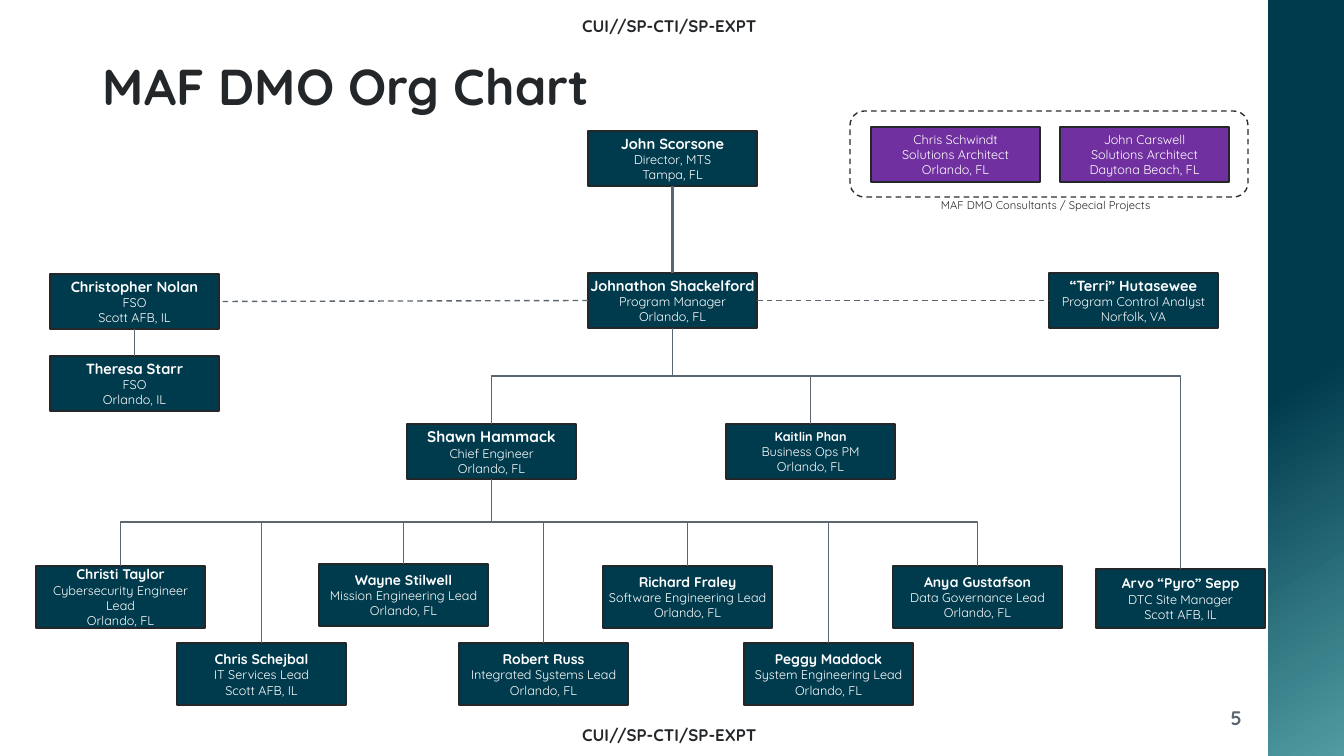
from pptx import Presentation
from pptx import util as u
from pptx.dml.color import RGBColor
from pptx.enum import dml, shapes, text
from pptx.oxml.ns import qn
from lxml import etree

# Content
COLORS = {"ink": "24272A", "teal": "003B4D", "sea": "509CA2", "purple": "7030A0",
          "grey": "5B6670", "outline": "282D31", "white": "FFFFFF"}
FONT = "Quicksand"
MARKING = "CUI//SP-CTI/SP-EXPT"
TITLE = "MAF DMO Org Chart"

# key: (left, top, height, size of the name, lines)
STAFF = {
    "director": (588, 131, 55, 10.5, ["John Scorsone", "Director, MTS", "Tampa, FL"]),
    "manager": (588, 273, 55, 10.5, ["Johnathon Shackelford", "Program Manager", "Orlando, FL"]),
    "security": (50, 274, 55, 10.5, ["Christopher Nolan", "FSO", "Scott AFB, IL"]),
    "deputy": (50, 356, 55, 10.5, ["Theresa Starr", "FSO", "Orlando, IL"]),
    "control": (1049, 273, 55, 10.5,
                ["“Terri” Hutasewee", "Program Control Analyst", "Norfolk, VA"]),
    "engineer": (407, 424, 55, 11, ["Shawn Hammack", "Chief Engineer", "Orlando, FL"]),
    "business": (726, 424, 55, 9, ["Kaitlin Phan", "Business Ops PM", "Orlando, FL"]),
    "site": (1096, 569, 59, 10, ["Arvo “Pyro” Sepp", "DTC Site Manager", "Scott AFB, IL"]),
    "cyber": (36, 566, 62, 10,
              ["Christi Taylor", "Cybersecurity Engineer", "Lead", "Orlando, FL"]),
    "it": (177, 643, 62, 10, ["Chris Schejbal", "IT Services Lead", "Scott AFB, IL"]),
    "mission": (319, 564, 62, 10,
                ["Wayne Stilwell", "Mission Engineering Lead", "Orlando, FL"]),
    "integrated": (459, 643, 62, 10,
                   ["Robert Russ", "Integrated Systems Lead", "Orlando, FL"]),
    "software": (603, 566, 62, 10,
                 ["Richard Fraley", "Software Engineering Lead", "Orlando, FL"]),
    "data": (893, 566, 62, 10, ["Anya Gustafson", "Data Governance Lead", "Orlando, FL"]),
    "system": (744, 643, 62, 10,
               ["Peggy Maddock", "System Engineering Lead", "Orlando, FL"]),
}
CONSULTANTS = [
    (1060, ["John Carswell", "Solutions Architect", "Daytona Beach, FL"]),
    (871, ["Chris Schwindt", "Solutions Architect", "Orlando, FL"]),
]
# (from, side, to, side, line width, dashed); sides: 0 top, 1 left, 2 bottom, 3 right
STRAIGHT = [
    ("director", 2, "manager", 0, 1.5, False),
    ("manager", 1, "security", 3, 1, True),
    ("security", 2, "deputy", 0, 1, False),
    ("manager", 3, "control", 1, 1, True),
]
# boss: (height of the shared bar, reports)
BRANCHES = {
    "manager": (376, ["engineer", "business", "site"]),
    "engineer": (522, ["cyber", "it", "mission", "integrated", "software", "data", "system"]),
}
BOX_WIDTH = 169

# Scale and helpers
PX = 12192000 / 1344


def px(*lengths):
    return [u.Emu(round(length * PX)) for length in lengths]


def color(name):
    return RGBColor.from_string(COLORS[name])


def style(para, size, tint, bold=False, align=text.PP_ALIGN.LEFT):
    para.alignment = align
    for span in para.runs:
        span.font.name, span.font.size, span.font.bold = FONT, u.Pt(size), bold
        span.font.color.rgb = color(tint)


def label(parent, frame, words, size, tint="ink", bold=True, align=text.PP_ALIGN.LEFT):
    box = parent.add_textbox(*px(*frame))
    box.text_frame.word_wrap = True
    box.text_frame.text = words
    style(box.text_frame.paragraphs[0], size, tint, bold, align)
    return box


def card(parent, left, top, height, lines, name_size, fill, bold_name):
    box = parent.add_shape(shapes.MSO_SHAPE.RECTANGLE, *px(left, top, BOX_WIDTH, height))
    box.shadow.inherit = False
    box.fill.solid()
    box.fill.fore_color.rgb = color(fill)
    box.line.color.rgb = color("ink")
    box.line.width = u.Pt(1.5)
    frame = box.text_frame
    frame.word_wrap = True
    frame.vertical_anchor = text.MSO_ANCHOR.MIDDLE
    frame.margin_left = frame.margin_right = frame.margin_top = frame.margin_bottom = px(1)[0]
    frame.text = "\n".join(lines)
    for row, para in enumerate(frame.paragraphs):
        style(para, 9 if row else name_size, "white", bold_name and row == 0,
              text.PP_ALIGN.CENTER)
    return box


def link(kind, start, start_side, end, end_side, width=1, dashed=False):
    line = page.shapes.add_connector(kind, 0, 0, 0, 0)
    line.begin_connect(start, start_side)
    line.end_connect(end, end_side)
    line.line.color.rgb = color("grey")
    line.line.width = u.Pt(width)
    if dashed:
        line.line.dash_style = dml.MSO_LINE.DASH
    etree.SubElement(line.element.spPr, qn("a:effectLst"))
    return line


def branch(boss, report, bar):
    """Elbow that goes down, along the bar and down again: a turned connector."""
    line = link(shapes.MSO_CONNECTOR.ELBOW, boss, 2, report, 0)
    x1, y1 = boss.left + boss.width // 2, boss.top + boss.height
    x2, y2 = report.left + report.width // 2, report.top
    drop, across = y2 - y1, abs(x2 - x1)
    line.left, line.top = (x1 + x2 - drop) // 2, (y1 + y2 - across) // 2
    line.width, line.height = drop, across
    xfrm = line.element.spPr.find(qn("a:xfrm"))
    for flip in ("flipH", "flipV"):
        xfrm.attrib.pop(flip, None)
    xfrm.set("rot", "16200000" if x2 > x1 else "5400000")
    if x2 > x1:
        xfrm.set("flipH", "1")
    geometry = line.element.spPr.find(qn("a:prstGeom"))
    guides = geometry.find(qn("a:avLst"))
    if guides is None:
        guides = etree.SubElement(geometry, qn("a:avLst"))
    turn = round((bar * PX - y1) / drop * 100000)
    etree.SubElement(guides, qn("a:gd"), name="adj1", fmla=f"val {turn}")


deck = Presentation()
deck.slide_width, deck.slide_height = px(1344, 756)
page = deck.slides.add_slide(deck.slide_layouts[6])

# Side band, markings, title and page number
band = page.shapes.add_shape(shapes.MSO_SHAPE.RECTANGLE, *px(1268, 0, 76, 756))
band.shadow.inherit = False
band.line.fill.background()
band.fill.gradient()
band.fill.gradient_angle = 300
for stop, place, tint in zip(band.fill.gradient_stops, (0.5, 1), ("teal", "sea")):
    stop.position = place
    stop.color.rgb = color(tint)
for top in (11, 720):
    label(page.shapes, (199, top, 941, 25), MARKING, 12, align=text.PP_ALIGN.CENTER)
label(page.shapes, (1159, 701, 93, 40), "5", 14, "grey", align=text.PP_ALIGN.RIGHT)
title = label(page.shapes, (93, 24, 1159, 97), TITLE, 36)
title.text_frame.vertical_anchor = text.MSO_ANCHOR.BOTTOM
title.text_frame.paragraphs[0].line_spacing = 0.9

# Staff boxes
boxes = {key: card(page.shapes, left, top, height, lines, size, "teal", True)
         for key, (left, top, height, size, lines) in STAFF.items()}

# Reporting lines
for start, start_side, end, end_side, width, dashed in STRAIGHT:
    link(shapes.MSO_CONNECTOR.STRAIGHT, boxes[start], start_side,
         boxes[end], end_side, width, dashed)
for boss, (bar, reports) in BRANCHES.items():
    for report in reports:
        branch(boxes[boss], boxes[report], bar)

# Consultants
group = page.shapes.add_group_shape()
for left, lines in CONSULTANTS:
    card(group.shapes, left, 127, 55, lines, 9, "purple", False)
border = group.shapes.add_shape(shapes.MSO_SHAPE.ROUNDED_RECTANGLE, *px(850, 111, 398, 86))
border.shadow.inherit = False
border.fill.background()
border.line.color.rgb = color("outline")
border.line.width = u.Pt(1)
border.line.dash_style = dml.MSO_LINE.DASH
caption = label(group.shapes, (931, 193, 242, 24),
                "MAF DMO Consultants / Special Projects", 8, bold=False)
caption.text_frame.word_wrap = False

deck.save("out.pptx")
